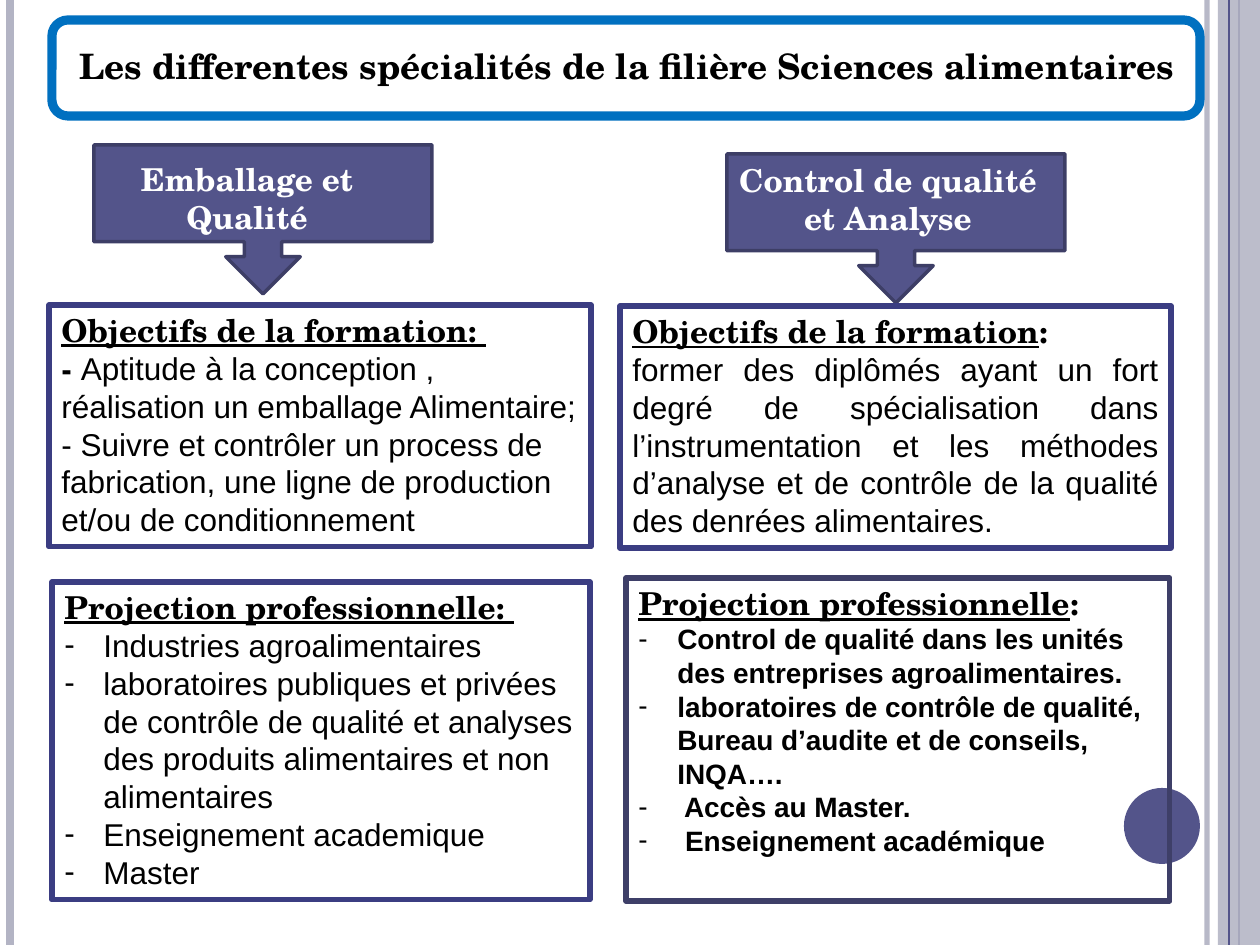
from dataclasses import dataclass
from typing import Optional

from lxml.etree import SubElement
from pptx import Presentation
from pptx.dml.color import RGBColor
from pptx.enum.shapes import MSO_CONNECTOR, MSO_SHAPE
from pptx.enum.text import MSO_ANCHOR, MSO_AUTO_SIZE, PP_ALIGN
from pptx.oxml.ns import qn
from pptx.util import Emu, Pt

PX = 914400 / 126
WIDTH, HEIGHT = 1260, 945
COLORS = {
    "ink": "000000", "white": "FFFFFF", "violet": "53548A", "violet_edge": "3D3E66",
    "frame": "3B3D82", "dark_frame": "3E3F68", "pale": "B3B4C4", "blue": "0070C0",
}
HEADING = {"name": "TeX Gyre Schola", "size": Pt(18), "bold": True, "underline": True}
COLON = {**HEADING, "underline": False}
TITLE = {**COLON, "size": Pt(20)}
BODY = {"name": "Arial", "size": Pt(18), "bold": False, "underline": False}
STRONG = {**BODY, "size": Pt(16), "bold": True}


@dataclass
class Run:
    text: str
    font: dict


@dataclass
class Para:
    runs: list[Run]
    align: PP_ALIGN = PP_ALIGN.LEFT
    bullet: bool = False


@dataclass
class Box:
    left: int
    top: int
    width: int
    height: int
    fill: Optional[str] = None
    line: Optional[str] = None
    weight: float = 0
    alpha: int = 100
    kind: MSO_SHAPE = MSO_SHAPE.RECTANGLE


@dataclass
class Rule:
    x: int
    color: str
    weight: float
    alpha: int = 100


def px(n: int) -> Emu:
    """Turn pixels into EMU."""
    return Emu(round(n * PX))


def rgb(name: str) -> RGBColor:
    """Look up a colour."""
    return RGBColor.from_string(COLORS[name])


def set_alpha(element, percent: int) -> None:
    """Make the first colour below an element translucent."""
    if percent < 100:
        color = next(element.iter(qn("a:srgbClr")))
        SubElement(color, qn("a:alpha"), val=str(percent * 1000))


def add_rule(shapes, rule: Rule) -> None:
    """Draw a vertical line down the whole slide."""
    s = shapes.add_connector(MSO_CONNECTOR.STRAIGHT, px(rule.x), 0, px(rule.x), px(HEIGHT))
    s.line.color.rgb = rgb(rule.color)
    s.line.width = Pt(rule.weight)
    set_alpha(s.line._get_or_add_ln(), rule.alpha)
    SubElement(s._element.spPr, qn("a:effectLst"))


def add_box(shapes, box: Box):
    """Draw a preset shape with its fill and outline."""
    s = shapes.add_shape(box.kind, *map(px, (box.left, box.top, box.width, box.height)))
    s.shadow.inherit = False
    if box.fill:
        s.fill.solid()
        s.fill.fore_color.rgb = rgb(box.fill)
        set_alpha(s._element.spPr, box.alpha)
    else:
        s.fill.background()
    if box.line:
        s.line.color.rgb = rgb(box.line)
        s.line.width = Pt(box.weight)
    else:
        s.line.fill.background()
    return s


def write(s, paras: list[Para], color: str = "ink", wrap: bool = True) -> None:
    """Write paragraphs into a shape."""
    tf = s.text_frame
    frame = {"word_wrap": wrap, "vertical_anchor": MSO_ANCHOR.TOP,
             "auto_size": MSO_AUTO_SIZE.SHAPE_TO_FIT_TEXT}
    for name, value in frame.items():
        setattr(tf, name, value)
    for i, para in enumerate(paras):
        p = tf.add_paragraph() if i else tf.paragraphs[0]
        p.alignment = para.align
        if para.bullet:
            pPr = p._p.get_or_add_pPr()
            pPr.set("marL", str(px(39)))
            pPr.set("indent", str(-px(39)))
            SubElement(pPr, qn("a:buFont"), typeface="Arial")
            SubElement(pPr, qn("a:buChar"), char="-")
        for run in para.runs:
            r = p.add_run()
            r.text = run.text
            r.font.color.rgb = rgb(color)
            for name, value in run.font.items():
                setattr(r.font, name, value)


def add_label(shapes, at: tuple, para: Para, color: str, wrap: bool = True) -> None:
    """Place a free text label."""
    write(shapes.add_textbox(*map(px, at)), [para], color, wrap)


def bullets(font: dict, *items: str) -> list[Para]:
    """Make dashed list paragraphs."""
    return [Para([Run(item, font)], bullet=True) for item in items]


BACKDROP = [
    Rule(1207, "pale", 3, 93), Rule(10, "pale", 4.5), Rule(1239, "violet", 1.5),
    Box(1218, 0, 42, HEIGHT, "pale", alpha=87), Rule(1229, "violet", 0.75),
    Box(1124, 788, 76, 76, "violet", kind=MSO_SHAPE.OVAL),
]
CALLOUTS = [
    (94, 145, (123, 154, 248, 89), "Emballage et Qualité"),
    (727, 154, (719, 155, 338, 89), "Control de qualité et Analyse"),
]
PANELS = [
    (Box(49, 305, 542, 242, line="frame", weight=3), [
        Para([Run("Objectifs de la formation: ", HEADING)]),
        Para([Run("- ", COLON),
              Run("Aptitude à la conception , réalisation un emballage Alimentaire;", BODY)]),
        Para([Run("- Suivre et contrôler un process de fabrication, "
                  "une ligne de production et/ou de conditionnement", BODY)]),
    ]),
    (Box(52, 582, 538, 318, line="frame", weight=3), [
        Para([Run("Projection professionnelle: ", HEADING)]),
        *bullets(BODY, "Industries agroalimentaires",
                 "laboratoires publiques et privées de contrôle de qualité et analyses "
                 "des produits alimentaires et non alimentaires",
                 "Enseignement academique", "Master"),
    ]),
    (Box(620, 306, 551, 242, line="frame", weight=3), [
        Para([Run("Objectifs de la formation", HEADING), Run(":", COLON)]),
        Para([Run("former des diplômés ayant un fort degré de spécialisation dans "
                  "l’instrumentation et les méthodes d’analyse et de contrôle de la qualité "
                  "des denrées alimentaires. ", BODY)], PP_ALIGN.JUSTIFY),
    ]),
    (Box(626, 578, 544, 323, line="dark_frame", weight=3), [
        Para([Run("Projection professionnelle", HEADING), Run(":", COLON)]),
        *bullets(STRONG, "Control de qualité dans les unités des entreprises agroalimentaires.",
                 "laboratoires de contrôle de qualité, Bureau d’audite et de conseils, INQA….",
                 " Accès au Master.", " Enseignement académique"),
    ]),
]


def main() -> None:
    """Build the slide and save it."""
    prs = Presentation()
    prs.slide_width, prs.slide_height = px(WIDTH), px(HEIGHT)
    shapes = prs.slides.add_slide(prs.slide_layouts[6]).shapes
    for item in BACKDROP:
        (add_rule if isinstance(item, Rule) else add_box)(shapes, item)
    banner = shapes.add_group_shape().shapes
    add_box(banner, Box(52, 20, 1148, 96, line="blue", weight=5.25,
                        kind=MSO_SHAPE.ROUNDED_RECTANGLE))
    title = "Les differentes spécialités de la filière Sciences alimentaires"
    add_label(banner, (67, 38, 1134, 55), Para([Run(title, TITLE)]), "ink", wrap=False)
    for left, top, label_at, text in CALLOUTS:
        add_box(shapes, Box(left, top, 338, 149, "violet", "violet_edge", 2,
                            kind=MSO_SHAPE.DOWN_ARROW_CALLOUT))
        add_label(shapes, label_at, Para([Run(text, COLON)], PP_ALIGN.CENTER), "white")
    for box, paras in PANELS:
        write(add_box(shapes, box), paras)
    prs.save("out.pptx")


if __name__ == "__main__":
    main()
